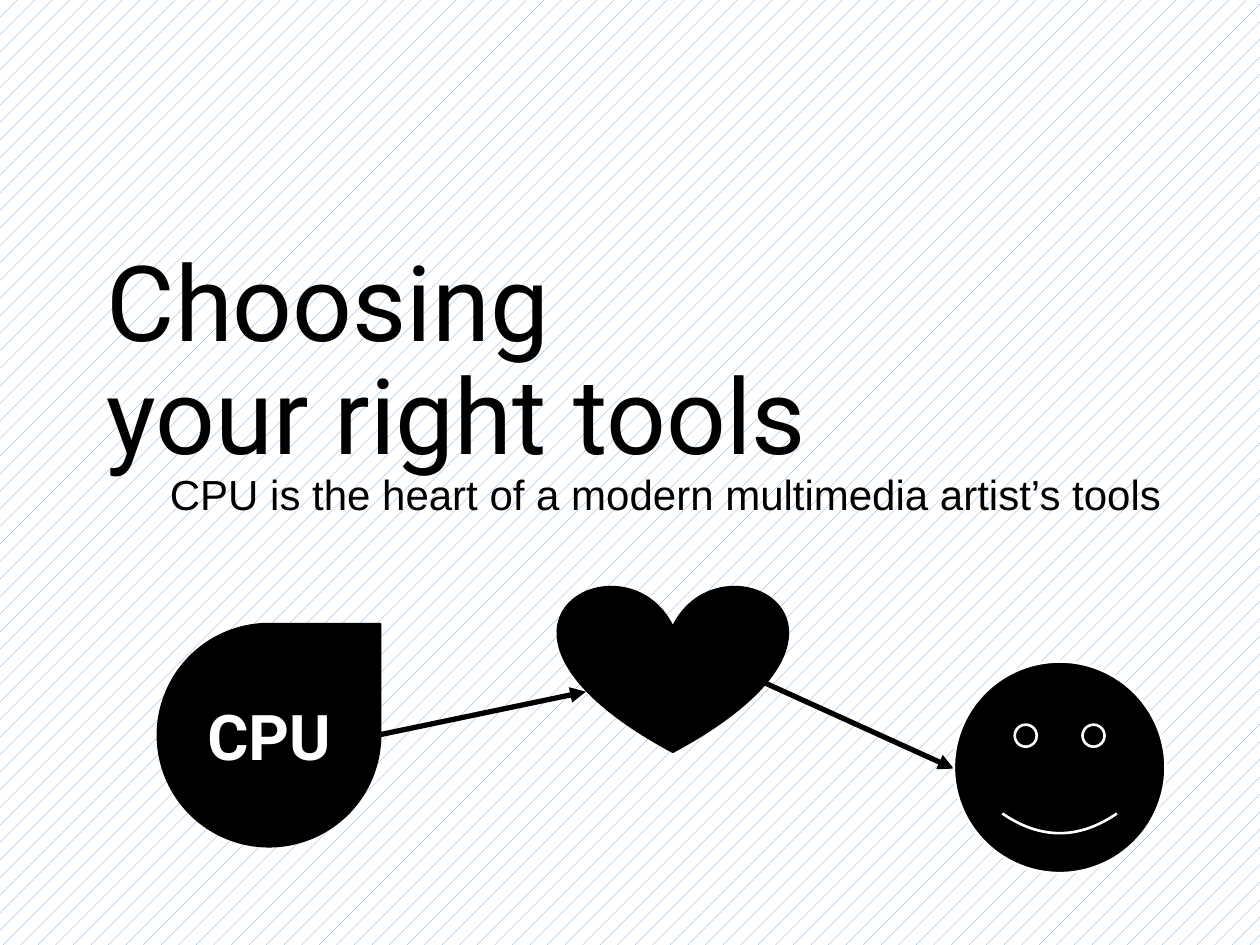
from dataclasses import dataclass

from lxml import etree
from pptx import Presentation
from pptx import util as u
from pptx.dml.color import RGBColor
from pptx.enum import dml, shapes, text
from pptx.oxml.ns import qn


@dataclass(frozen=True)
class Theme:
    """Colours, fonts and type sizes of the deck."""
    ink: str = "000000"
    paper: str = "FFFFFF"
    hatch: str = "5B9BD5"
    title_font: str = "Roboto"
    body_font: str = "Arial"
    title_size: int = 60
    body_size: int = 24
    label_size: int = 36


THEME = Theme()
WIDTH, HEIGHT = 10, 7.5


def colour(value):
    """Return a hex string as a colour."""
    return RGBColor.from_string(value)


def inches(*lengths):
    """Return lengths in inches as a list of slide units."""
    return [u.Inches(length) for length in lengths]


def hatch_background(page):
    """Fill the page with a light pattern."""
    fill = page.background.fill
    fill.patterned()
    fill.pattern = dml.MSO_PATTERN.PERCENT_5
    fill.fore_color.rgb = colour(THEME.hatch)
    fill.back_color.rgb = colour(THEME.paper)


def write(frame, words, font, size, ink=THEME.ink, bold=False):
    """Put one styled paragraph in a text frame and return it."""
    frame.word_wrap = True
    para = frame.paragraphs[0]
    para.text = words
    para.font.name, para.font.size = font, u.Pt(size)
    para.font.bold, para.font.color.rgb = bold, colour(ink)
    return para


def add_text(page, area, words, font, size, anchor, spacing=1.0):
    """Add a text box holding one paragraph."""
    frame = page.shapes.add_textbox(*inches(*area)).text_frame
    frame.vertical_anchor = anchor
    write(frame, words, font, size).line_spacing = spacing


def add_symbol(page, kind, area, outline=THEME.ink, weight=1):
    """Add a solid preset shape and return it."""
    shape = page.shapes.add_shape(kind, *inches(*area))
    shape.shadow.inherit = False
    shape.fill.solid()
    shape.fill.fore_color.rgb = colour(THEME.ink)
    shape.line.color.rgb = colour(outline)
    shape.line.width = u.Pt(weight)
    return shape


def add_arrow(page, start, end):
    """Add a straight arrow between two points."""
    arrow = page.shapes.add_connector(
        shapes.MSO_CONNECTOR.STRAIGHT, *inches(*start, *end))
    arrow.line.color.rgb = colour(THEME.ink)
    arrow.line.width = u.Pt(3)
    etree.SubElement(arrow.line._get_or_add_ln(), qn("a:tailEnd"), type="triangle")
    etree.SubElement(arrow._element.spPr, qn("a:effectLst"))


def add_label(shape, words):
    """Centre a bold label inside a shape."""
    frame = shape.text_frame
    frame.vertical_anchor = text.MSO_ANCHOR.MIDDLE
    para = write(frame, words, THEME.title_font, THEME.label_size, THEME.paper, True)
    para.alignment = text.PP_ALIGN.CENTER


def main():
    """Build the title slide and save it."""
    deck = Presentation()
    deck.slide_width, deck.slide_height = inches(WIDTH, HEIGHT)
    page = deck.slides.add_slide(deck.slide_layouts[6])
    hatch_background(page)

    margin, indent = WIDTH * 0.075, WIDTH * 0.125
    add_text(page, (margin, 1.23, WIDTH - 2 * margin, 2.61),
             "Choosing \vyour right tools", THEME.title_font, THEME.title_size,
             text.MSO_ANCHOR.BOTTOM, 0.9)
    add_text(page, (indent, 3.67, 8.38, 1.81),
             "CPU is the heart of a modern multimedia artist’s tools",
             THEME.body_font, THEME.body_size, text.MSO_ANCHOR.TOP)

    kinds = shapes.MSO_SHAPE
    add_symbol(page, kinds.HEART, (4.43, 4.64, 1.82, 1.33))
    chip = add_symbol(page, kinds.TEAR, (indent, 4.95, 1.77, 1.77))
    add_label(chip, "CPU")
    add_arrow(page, (3.02, 5.83), (4.65, 5.49))
    add_arrow(page, (6.07, 5.42), (7.57, 6.1))
    add_symbol(page, kinds.SMILEY_FACE, (7.57, 5.25, 1.68, 1.68), THEME.paper, 1.5)
    deck.save("out.pptx")


if __name__ == "__main__":
    main()
